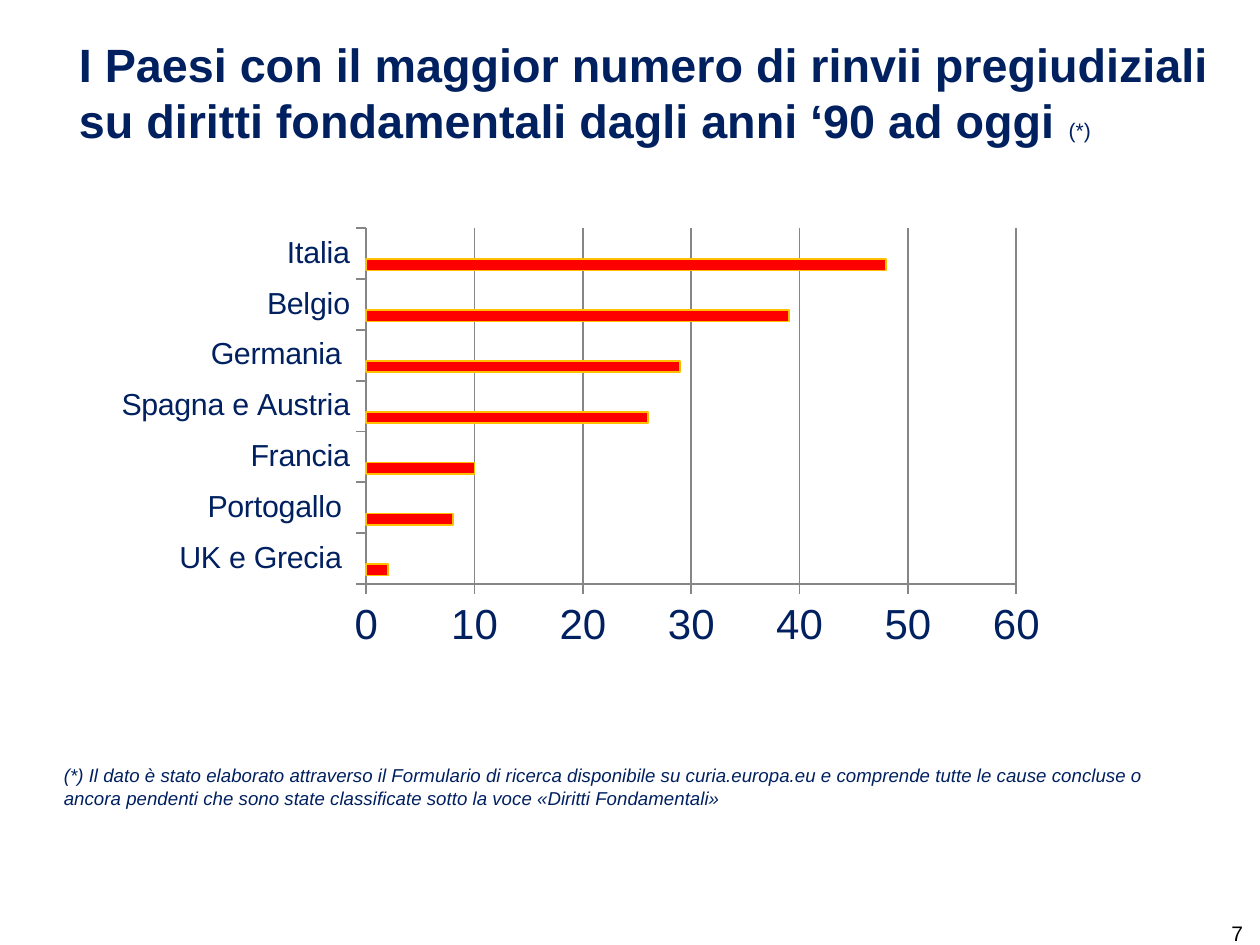
from pptx import Presentation
from pptx.chart.data import CategoryChartData
from pptx.dml.color import RGBColor
from pptx.enum import chart as ch, text
from pptx.oxml import parse_xml
from pptx.oxml.ns import nsdecls
from pptx.util import Inches, Pt

FONT = "Arial"
COLORS = {"navy": "002060", "black": "000000", "red": "FF0000",
          "gold": "FFC000", "crimson": "C9282D", "white": "FFFFFF",
          "grid": "868686"}

TITLE = ("I Paesi con il maggior numero di rinvii pregiudiziali "
         "su diritti fondamentali dagli anni ‘90 ad oggi ")
MARK = "(*)"
NOTE = ("(*) Il dato è stato elaborato attraverso il Formulario di ricerca "
        "disponibile su curia.europa.eu e comprende tutte le cause concluse o "
        "ancora pendenti che sono state classificate sotto la voce "
        "«Diritti Fondamentali»")
PAGE = "7"

REFERRALS = {"UK e Grecia ": 2, "Portogallo ": 8, "Francia": 10,
             "Spagna e Austria": 26, "Germania ": 29, "Belgio": 39,
             "Italia": 48}
SERIES = [("Series 1", list(REFERRALS.values()), "red"),
          ("Series 2", [None] * len(REFERRALS), "crimson"),
          ("Series 3", [None] * len(REFERRALS), "white")]
CHART_BOX = (0.61, 1.31, 5.69, 2.6)
PLOT_BOX = (2.18, 1.36, 3.87, 2.12)


def rgb(name):
    return RGBColor.from_string(COLORS[name])


def set_font(font, size, color, bold=False, italic=False):
    font.name, font.size = FONT, Pt(size)
    font.bold, font.italic = bold, italic
    font.color.rgb = rgb(color)


def add_text(s, box, content, left=0.08, anchor=text.MSO_ANCHOR.TOP):
    """Add a wrapped text box and return its paragraph."""
    tf = s.shapes.add_textbox(*map(Inches, box)).text_frame
    tf.word_wrap = True
    tf.vertical_anchor = anchor
    tf.margin_left, tf.margin_right = Inches(left), Inches(0.08)
    tf.margin_top = tf.margin_bottom = Inches(0.04)
    p = tf.paragraphs[0]
    p.add_run().text = content
    return p


def place_plot(chart):
    """Fix the inner plot area, given in slide inches."""
    cx, cy, cw, chh = CHART_BOX
    x, y, w, h = PLOT_BOX
    parts = {"x": (x - cx) / cw, "y": (y - cy) / chh, "w": w / cw, "h": h / chh}
    modes = '<c:xMode val="edge"/><c:yMode val="edge"/>'
    values = "".join(f'<c:{k} val="{v:.3f}"/>' for k, v in parts.items())
    layout = parse_xml(
        f'<c:layout {nsdecls("c")}><c:manualLayout>'
        f'<c:layoutTarget val="inner"/>{modes}{values}'
        '</c:manualLayout></c:layout>')
    area = chart._chartSpace.chart.plotArea
    for old in area.findall(layout.tag):
        area.remove(old)
    area.insert(0, layout)


def add_referrals_chart(s):
    data = CategoryChartData()
    data.categories = list(REFERRALS)
    for name, values, _ in SERIES:
        data.add_series(name, values)
    chart = s.shapes.add_chart(ch.XL_CHART_TYPE.BAR_CLUSTERED,
                               *map(Inches, CHART_BOX), data).chart
    chart.has_legend = chart.has_title = False
    set_font(chart.font, 18, "black")
    plot = chart.plots[0]
    plot.gap_width, plot.overlap = 150, 0
    plot.vary_by_categories = False
    for series, (_, _, color) in zip(plot.series, SERIES):
        series.format.fill.solid()
        series.format.fill.fore_color.rgb = rgb(color)
    outline = plot.series[0].format.line
    outline.color.rgb, outline.width = rgb("gold"), Pt(0.75)

    cat, val = chart.category_axis, chart.value_axis
    val.minimum_scale, val.maximum_scale, val.major_unit = 0, 60, 10
    val.has_major_gridlines = True
    for axis, size in ((cat, 13), (val, 18)):
        set_font(axis.tick_labels.font, size, "navy")
        axis.major_tick_mark = ch.XL_TICK_MARK.OUTSIDE
    for lined in (cat, val, val.major_gridlines):
        lined.format.line.color.rgb = rgb("grid")
        lined.format.line.width = Pt(0.75)
    place_plot(chart)


def main():
    prs = Presentation()
    prs.slide_width = Inches(7.5)
    prs.slide_height = prs.slide_width * 3 // 4
    s = prs.slides.add_slide(prs.slide_layouts[6])

    p = add_text(s, (0.25, 0.13, 7.06, 0.79), TITLE, 0.22,
                 text.MSO_ANCHOR.BOTTOM)
    set_font(p.runs[0].font, 20, "navy", bold=True)
    r = p.add_run()
    r.text = MARK
    set_font(r.font, 9, "navy")

    p = add_text(s, (0.3, 4.51, 6.85, 0.56), NOTE)
    set_font(p.font, 8, "navy", italic=True)

    p = add_text(s, (7.25, 5.44, 0.25, 0.19), PAGE)
    set_font(p.font, 9, "black")

    add_referrals_chart(s)
    prs.save("out.pptx")


if __name__ == "__main__":
    main()
